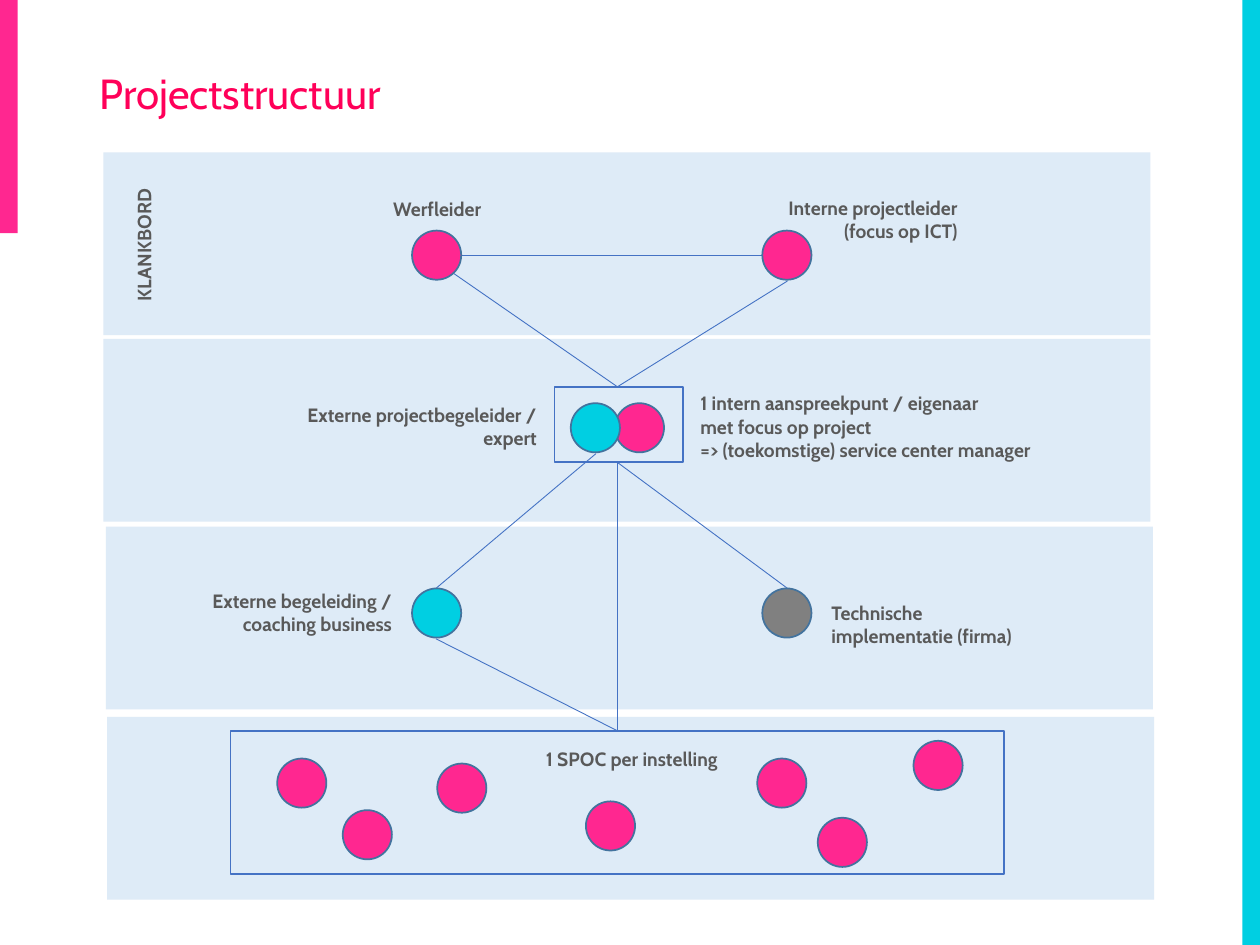
import pptx
import pptx.dml.color
import pptx.enum.shapes
import pptx.enum.text
import pptx.oxml
import pptx.util
from pptx.util import Inches

THEME = {
    "pink": "FF2790", "cyan": "00CFE2", "grey": "808080", "band": "DEEBF7",
    "title": "FF0059", "text": "595959", "line": "4472C4", "rim": "43739E",
    "font": "Cabin", "title_size": 24, "label_size": 11,
    "rim_width": 1, "link_width": 0.5,
}
SHAPE = pptx.enum.shapes.MSO_SHAPE
ALIGN = pptx.enum.text.PP_ALIGN
DOT = 0.39


def add_block(kind, box, fill=None, line=None):
    sp = s.shapes.add_shape(kind, *map(Inches, box))
    sp.shadow.inherit = False
    if fill:
        sp.fill.solid()
        sp.fill.fore_color.rgb = color(fill)
    else:
        sp.fill.background()
    if line:
        sp.line.color.rgb = color(line)
        sp.line.width = pptx.util.Pt(THEME["rim_width"])
    else:
        sp.line.fill.background()


def color(name):
    return pptx.dml.color.RGBColor.from_string(THEME[name])


prs = pptx.Presentation()
prs.slide_width, prs.slide_height = Inches(10), Inches(7.5)
s = prs.slides.add_slide(prs.slide_layouts[5])

# Edge bars
add_block(SHAPE.RECTANGLE, (0, 0, 0.14, 1.85), "pink")
add_block(SHAPE.RECTANGLE, (9.86, 0, 0.14, 7.5), "cyan")

# Title
title = s.shapes.title
title.left, title.top, title.width, title.height = map(Inches, (0.69, 0.4, 8.62, 0.8))
tf = title.text_frame
tf.text = "Projectstructuur"
tf.vertical_anchor = pptx.enum.text.MSO_ANCHOR.TOP
tf.margin_top = Inches(0.18)
p = tf.paragraphs[0]
p.line_spacing = 0.9
p.alignment = ALIGN.LEFT
p.font.name = THEME["font"]
p.font.size = pptx.util.Pt(THEME["title_size"])
p.font.color.rgb = color("title")

# Level bands
for x, y in [(0.82, 1.21), (0.82, 2.69), (0.84, 4.18), (0.85, 5.69)]:
    add_block(SHAPE.RECTANGLE, (x, y, 8.31, 1.45), "band")

# Links between the roles
hub_top, hub_bottom, spoc_top = (4.9, 3.07), (4.9, 3.67), (4.9, 5.8)
coach_top, coach_bottom = (3.46, 4.67), (3.46, 5.07)
links = [
    ((6.05, 2.03), (3.66, 2.03)),
    ((6.25, 2.23), hub_top),
    ((3.6, 2.17), hub_top),
    ((4.73, 3.6), coach_top),
    (coach_bottom, spoc_top),
    (hub_bottom, (6.25, 4.67)),
    (hub_bottom, spoc_top),
]
for start, end in links:
    link = s.shapes.add_connector(
        pptx.enum.shapes.MSO_CONNECTOR.STRAIGHT, *map(Inches, start + end))
    link.line.color.rgb = color("line")
    link.line.width = pptx.util.Pt(THEME["link_width"])
    link._element.spPr.append(pptx.oxml.parse_xml(
        '<a:effectLst xmlns:a="http://schemas.openxmlformats.org/drawingml/2006/main"/>'))

# Role circles, the last seven being the contacts per institution
dots = [
    (3.27, 1.83, "pink"), (6.05, 1.83, "pink"),
    (4.88, 3.2, "pink"), (4.53, 3.2, "cyan"),
    (3.27, 4.67, "cyan"), (6.05, 4.67, "grey"),
    (2.2, 6.02, "pink"), (2.72, 6.43, "pink"), (3.47, 6.06, "pink"),
    (4.65, 6.36, "pink"), (6.01, 6.02, "pink"), (6.49, 6.49, "pink"),
    (7.25, 5.88, "pink"),
]
for x, y, fill in dots:
    add_block(SHAPE.OVAL, (x, y, DOT, DOT), fill, "rim")

# Frames around the project pair and the contacts
for box in [(4.4, 3.07, 1.02, 0.6), (1.83, 5.8, 6.14, 1.14)]:
    add_block(SHAPE.RECTANGLE, box, line="line")

# Labels
labels = [
    ((0.31, 1.8, 1.67, 0.29), ALIGN.CENTER, 270, ["KLANKBORD"]),
    ((2.88, 1.52, 1.18, 0.29), ALIGN.CENTER, 0, ["Werfleider"]),
    ((5.76, 1.51, 1.94, 0.47), ALIGN.RIGHT, 0, ["Interne projectleider (focus op ICT)"]),
    ((2.18, 3.15, 2.18, 0.66), ALIGN.RIGHT, 0, ["Externe projectbegeleider / expert"]),
    ((5.46, 3.06, 3.46, 0.66), ALIGN.LEFT, 0,
     ["1 intern aanspreekpunt / eigenaar", "met focus op project",
      "=> (toekomstige) service center manager"]),
    ((1.29, 4.63, 1.92, 0.47), ALIGN.RIGHT, 0,
     ["Externe begeleiding /", "coaching business"]),
    ((6.5, 4.72, 1.76, 0.66), ALIGN.LEFT, 0, ["Technische implementatie (firma)"]),
    ((4, 5.88, 2.03, 0.29), ALIGN.CENTER, 0, ["1 SPOC per instelling"]),
]
for box, align, rotation, lines in labels:
    sp = s.shapes.add_textbox(*map(Inches, box))
    sp.rotation = rotation
    tf = sp.text_frame
    tf.word_wrap = True
    tf.text = "\n".join(lines)
    for p in tf.paragraphs:
        p.alignment = align
        p.font.name = THEME["font"]
        p.font.size = pptx.util.Pt(THEME["label_size"])
        p.font.color.rgb = color("text")
        p.font.bold = True

prs.save("out.pptx")
